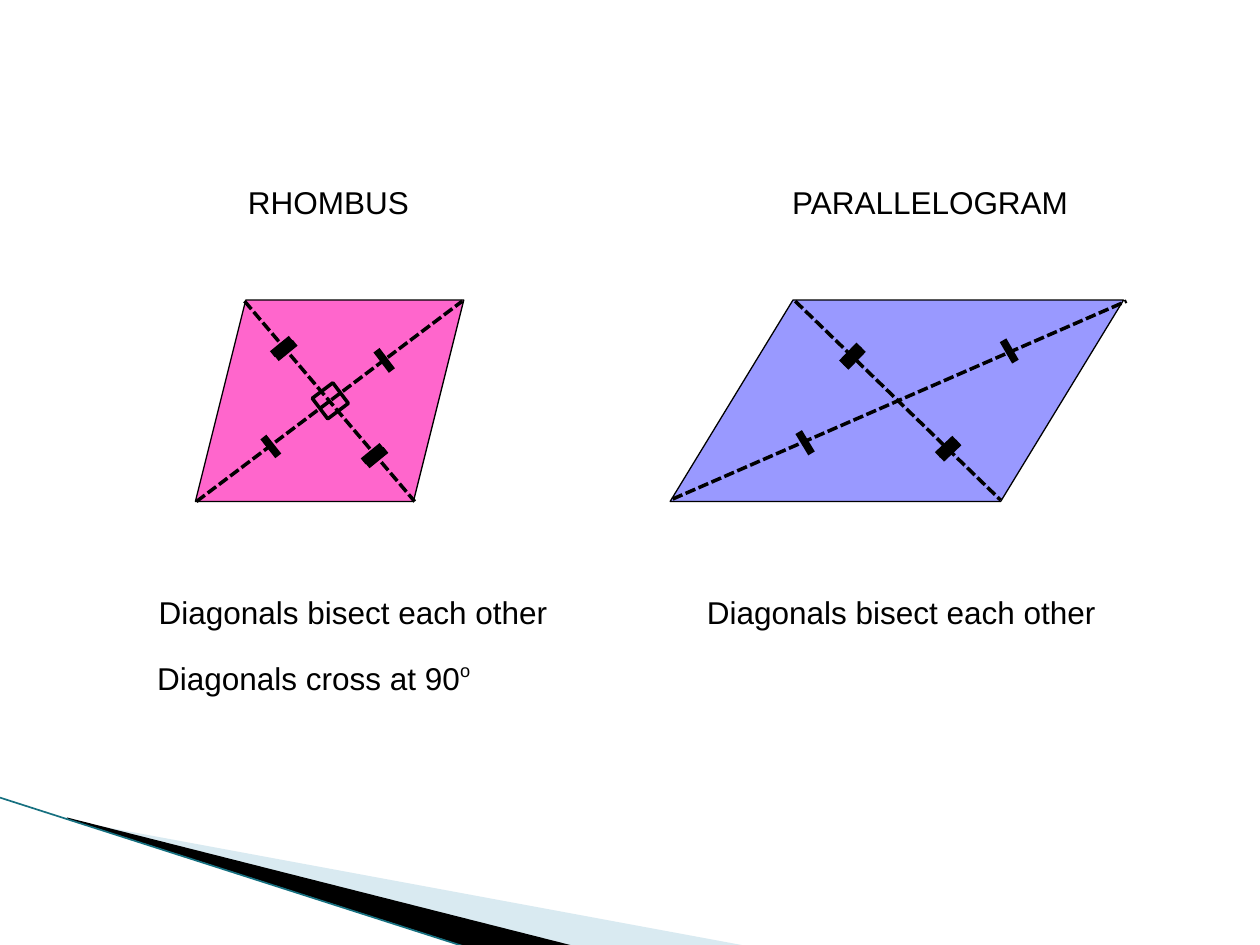
"""Build a slide comparing the diagonals of a rhombus and a parallelogram."""
from lxml.etree import SubElement
from pptx import Presentation
from pptx.dml.color import RGBColor
from pptx.enum.dml import MSO_LINE_DASH_STYLE as DASH
from pptx.enum.shapes import MSO_CONNECTOR, MSO_SHAPE as SHAPE
from pptx.enum.text import MSO_AUTO_SIZE as AUTO
from pptx.oxml.ns import qn
from pptx.util import Cm, Pt

BLACK = RGBColor(0x00, 0x00, 0x00)
PINK = RGBColor(0xFF, 0x66, 0xCC)
VIOLET = RGBColor(0x99, 0x99, 0xFF)
PALE_BLUE = RGBColor(0xA0, 0xCB, 0xDC)
TEAL = RGBColor(0x16, 0x70, 0x80)


class Figure:
    font, size = "Arial", Pt(18)
    tick_width, diagonal_width = 4.33, 2

    def __init__(self, s):
        self.s = s

    def wedge(self, points, color, alpha=None):
        corners = [(Cm(x), Cm(y)) for x, y in points]
        builder = self.s.shapes.build_freeform(*corners[0])
        builder.add_line_segments(corners[1:], close=True)
        sp = builder.convert_to_shape()
        sp.shadow.inherit = False
        sp.fill.solid()
        sp.fill.fore_color.rgb = color
        sp.line.fill.background()
        if alpha:
            clr = sp.fill._xPr.find(qn("a:solidFill"))[0]
            SubElement(clr, qn("a:alpha"), val=str(alpha * 1000))

    def shape(self, kind, box, width, color=None, adj=None):
        sp = self.s.shapes.add_shape(kind, *map(Cm, box))
        sp.shadow.inherit = False
        sp.line.color.rgb = BLACK
        sp.line.width = Pt(width)
        if color is None:
            sp.fill.background()
        else:
            sp.fill.solid()
            sp.fill.fore_color.rgb = color
        if adj is not None:
            sp.adjustments[0] = adj
        return sp

    def line(self, ends, width, color=BLACK, dash=None, parent=None):
        shapes = (parent or self.s).shapes
        ln = shapes.add_connector(MSO_CONNECTOR.STRAIGHT, *map(Cm, ends))
        ln.line.color.rgb = color
        ln.line.width = Pt(width)
        if dash:
            ln.line.dash_style = dash
        SubElement(ln._element.spPr, qn("a:effectLst"))

    def diagonal(self, ends):
        self.line(ends, self.diagonal_width, dash=DASH.SQUARE_DOT)

    def tick(self, ends, parent=None):
        self.line(ends, self.tick_width, parent=parent)

    def double_tick(self, ends):
        group = self.s.shapes.add_group_shape()
        for gap in (0, 0.08):
            self.tick([v + gap for v in ends], group)

    def text(self, words, left, top, width, wrap=True, superscript=None):
        box = self.s.shapes.add_textbox(Cm(left), Cm(top), Cm(width), Cm(1.02))
        tf = box.text_frame
        tf.text = words
        tf.word_wrap = wrap
        tf.auto_size = AUTO.SHAPE_TO_FIT_TEXT
        p = tf.paragraphs[0]
        if superscript:
            r = p.add_run()
            r.text = superscript
            r.font._element.set("baseline", "40000")
        for r in p.runs:
            r.font.name = self.font
            r.font.size = self.size
            r.font.color.rgb = BLACK


def main():
    prs = Presentation()
    prs.slide_width, prs.slide_height = Cm(25.4), Cm(19.05)
    fig = Figure(prs.slides.add_slide(prs.slide_layouts[6]))

    fig.wedge([(1.4, 16.54), (15.11, 19.08), (11.58, 19.08), (1.4, 16.51)], PALE_BLUE, 40)
    fig.wedge([(1.35, 16.48), (11.61, 19.08), (9.45, 19.1), (1.37, 16.51)], BLACK)
    fig.line((0, 16.08, 9.42, 19.1), 0.95, TEAL)

    fig.shape(SHAPE.PARALLELOGRAM, (13.51, 6.05, 9.14, 4.06), 0.75, VIOLET, 0.61)
    fig.shape(SHAPE.PARALLELOGRAM, (3.94, 6.05, 5.41, 4.06), 0.75, PINK, 0.25)

    fig.text("RHOMBUS", 4.75, 3.56, 4.95)
    fig.text("PARALLELOGRAM", 15.72, 3.56, 6.48)
    for left in (2.95, 14):
        fig.text("Diagonals bisect each other", left, 11.84, 10)
    fig.text("Diagonals cross at 90", 2.92, 13.16, 6.91, wrap=False, superscript="o")

    for ends in (
        (3.96, 10.11, 9.32, 6.07),
        (4.93, 6.07, 8.36, 10.11),
        (16.03, 6.07, 20.17, 10.08),
        (13.56, 10.06, 22.71, 6.07),
    ):
        fig.diagonal(ends)
    for ends in (
        (5.31, 8.81, 5.61, 9.19),
        (7.59, 7.06, 7.9, 7.47),
        (16.1, 8.71, 16.36, 9.14),
        (20.22, 6.86, 20.47, 7.29),
    ):
        fig.tick(ends)
    for ends in (
        (19.25, 8.84, 18.9, 9.17),
        (17.32, 6.96, 16.97, 7.32),
        (5.87, 6.83, 5.49, 7.14),
        (7.7, 8.99, 7.32, 9.3),
    ):
        fig.double_tick(ends)

    right_angle = fig.shape(SHAPE.RECTANGLE, (6.4, 7.82, 0.52, 0.52), 2)
    right_angle.rotation = 323

    prs.save("out.pptx")


if __name__ == "__main__":
    main()
